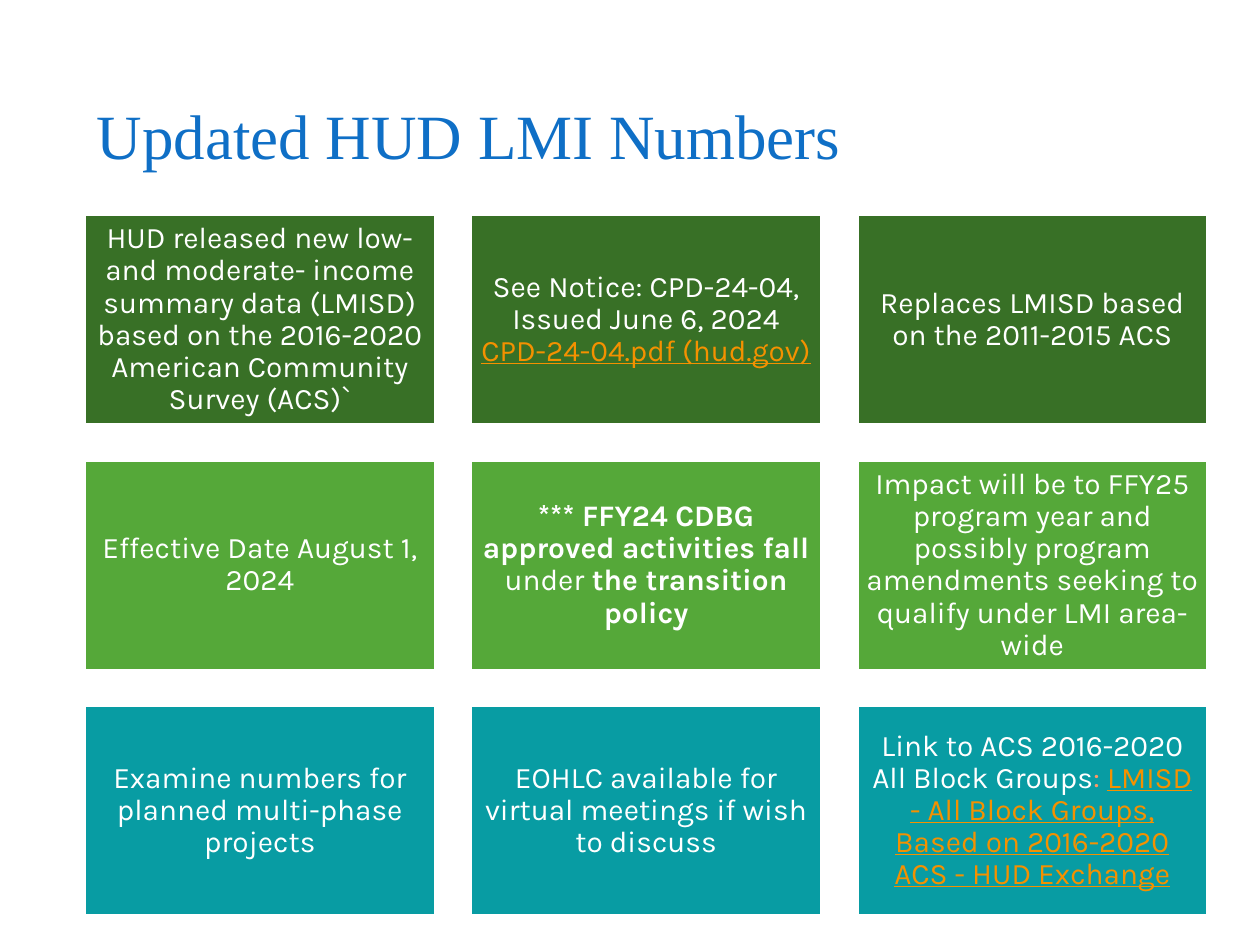
from pptx import Presentation
from pptx.dml.color import RGBColor
from pptx.enum.shapes import MSO_SHAPE
from pptx.enum.text import MSO_ANCHOR, MSO_AUTO_SIZE, PP_ALIGN
from pptx.util import Pt

RECT = MSO_SHAPE.RECTANGLE
TOP, MIDDLE = MSO_ANCHOR.TOP, MSO_ANCHOR.MIDDLE
LEFT, CENTER = PP_ALIGN.LEFT, PP_ALIGN.CENTER
NO_FIT = MSO_AUTO_SIZE.NONE

WHITE = RGBColor(0xFF, 0xFF, 0xFF)
BLUE = RGBColor(0x0F, 0x6F, 0xC6)
FOREST = RGBColor(0x38, 0x70, 0x26)
GREEN = RGBColor(0x55, 0xA8, 0x39)
TEAL = RGBColor(0x08, 0x9C, 0xA3)
ORANGE = RGBColor(0xF4, 0x91, 0x00)
PEACH = RGBColor(0xFF, 0x99, 0x66)

HEAD = {"name": "Times New Roman", "size": Pt(36), "color": BLUE}
PLAIN = {"name": "Karla", "size": Pt(17), "color": WHITE}
BOLD = {**PLAIN, "bold": True}
LINK = {**PLAIN, "color": ORANGE, "underline": True}
COLON = {**PLAIN, "color": PEACH}

# Each row: fill, then three cards, each a list of (text, format) runs
ROWS = [
    (FOREST, [
        [("HUD released new low-and moderate- income summary data (LMISD) "
          "based on the 2016-2020 American Community Survey (ACS)`", PLAIN)],
        [("See Notice: CPD-24-04, Issued June 6, 2024 ", PLAIN),
         ("CPD-24-04.pdf (hud.gov)", LINK)],
        [("Replaces LMISD based on the 2011-2015 ACS", PLAIN)],
    ]),
    (GREEN, [
        [("Effective Date August 1, 2024", PLAIN)],
        [("*** FFY24 CDBG approved activities fall ", BOLD),
         ("under", PLAIN), (" the transition policy", BOLD)],
        [("Impact will be to FFY25 program year and possibly program "
          "amendments seeking to qualify under LMI area-wide", PLAIN)],
    ]),
    (TEAL, [
        [("Examine numbers for planned multi-phase projects", PLAIN)],
        [("EOHLC available for virtual meetings if wish to discuss", PLAIN)],
        [("Link to ACS 2016-2020 All Block Groups", PLAIN), (": ", COLON),
         ("LMISD - All Block Groups, Based on 2016-2020 ACS - HUD Exchange",
          LINK)],
    ]),
]

GRID_X, GRID_Y = 48.2, 122.4
CARD_W, CARD_H = 200.7, 120.4
GAP = 20


def add_run(para, text, style):
    run = para.add_run()
    run.text = text
    for key, value in style.items():
        if key == "color":
            run.font.color.rgb = value
        else:
            setattr(run.font, key, value)


prs = Presentation()
prs.slide_width, prs.slide_height = Pt(720), Pt(540)
slide = prs.slides.add_slide(prs.slide_layouts[5])

title = slide.shapes.title
title.left, title.top = Pt(48.2), Pt(48.2)
title.width, title.height = Pt(500), Pt(103.7)
frame = title.text_frame
for key, value in {"vertical_anchor": TOP, "auto_size": NO_FIT,
                   "word_wrap": True, "margin_top": Pt(7)}.items():
    setattr(frame, key, value)
para = frame.paragraphs[0]
para.alignment = LEFT
add_run(para, "Updated HUD LMI Numbers", HEAD)

for row, (fill, cards) in enumerate(ROWS):
    for col, runs in enumerate(cards):
        card = slide.shapes.add_shape(
            RECT, Pt(GRID_X + col * (CARD_W + GAP)),
            Pt(GRID_Y + row * (CARD_H + GAP)), Pt(CARD_W), Pt(CARD_H))
        card.shadow.inherit = False
        card.fill.solid()
        card.fill.fore_color.rgb = fill
        card.line.color.rgb = WHITE
        card.line.width = Pt(2)
        frame = card.text_frame
        frame.word_wrap = True
        frame.vertical_anchor = MIDDLE
        for side in ("left", "right", "top", "bottom"):
            setattr(frame, "margin_" + side, Pt(5))
        para = frame.paragraphs[0]
        para.alignment = CENTER
        para.line_spacing = 0.9
        for text, style in runs:
            add_run(para, text, style)

prs.save("out.pptx")
